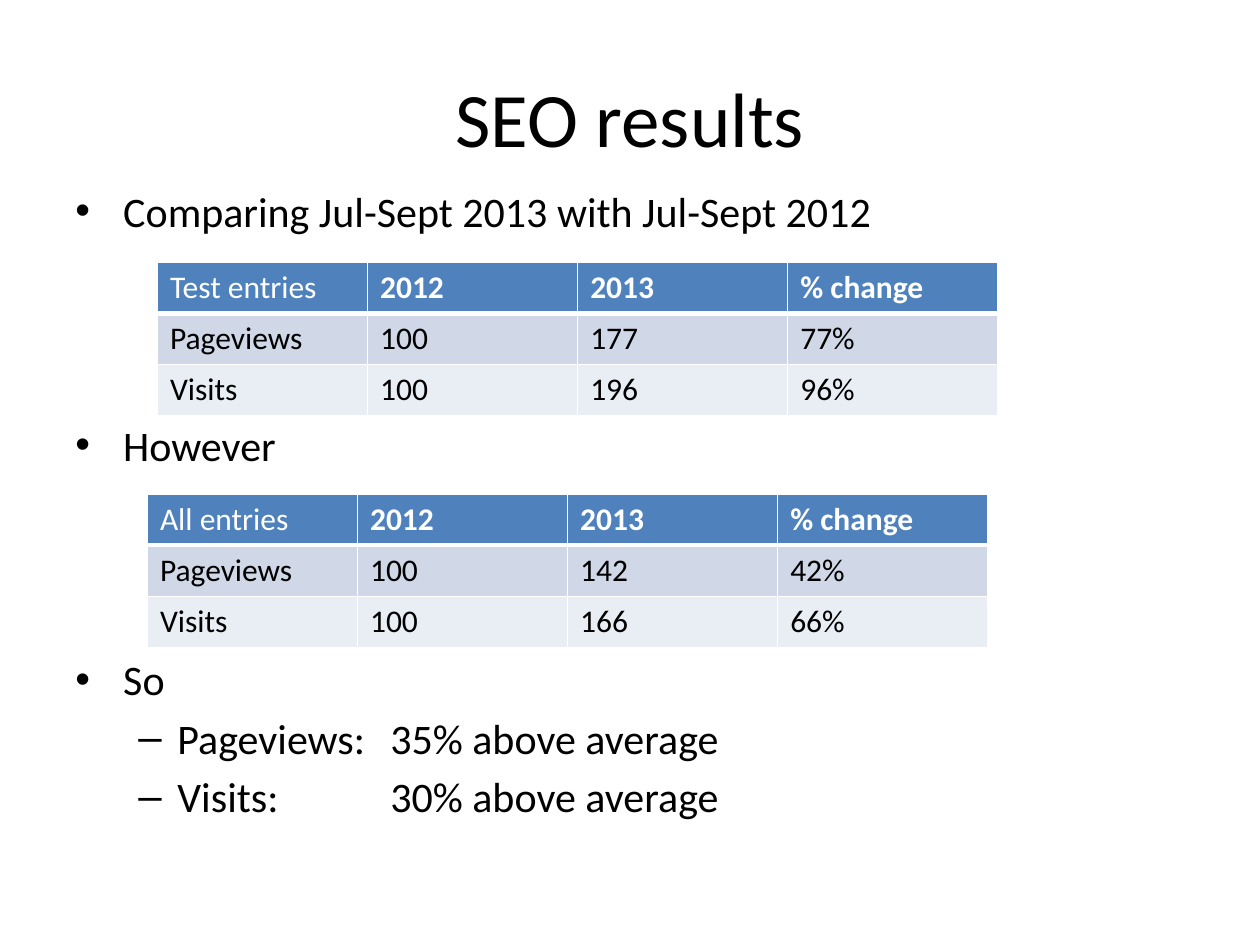
import pptx
import pptx.dml.color
import pptx.enum.text
import pptx.oxml
import pptx.oxml.ns
import pptx.util
from pptx.util import Inches

FONT = "Calibri"
BLACK, WHITE = "000000", "FFFFFF"
HEADER_FILL, BAND_FILLS = "4F81BD", ("D0D8E8", "E9EDF4")


def color(value):
    """Return the colour for a hex string."""
    return pptx.dml.color.RGBColor.from_string(value)


def set_font(paragraph, size, value=BLACK, bold=False):
    """Format all the text of a paragraph."""
    font = paragraph.font
    font.name, font.size, font.bold = FONT, pptx.util.Pt(size), bold
    font.color.rgb = color(value)


def add_xml(parent, markup):
    """Append a DrawingML element to a parent."""
    namespace = pptx.oxml.ns.nsdecls("a")
    parent.append(pptx.oxml.parse_xml(markup.replace("/>", f" {namespace}/>", 1)
                                      if markup.endswith("/>") and markup.count("<") == 1
                                      else markup.replace(">", f" {namespace}>", 1)))


def add_title(slide, text):
    """Place and fill the slide title."""
    title = slide.shapes.title
    title.left, title.top = Inches(0.5), Inches(0.3)
    title.width, title.height = Inches(9), Inches(1.25)
    title.text_frame.text = text
    title.text_frame.vertical_anchor = pptx.enum.text.MSO_ANCHOR.MIDDLE
    heading = title.text_frame.paragraphs[0]
    heading.alignment = pptx.enum.text.PP_ALIGN.CENTER
    set_font(heading, 44)


def add_bullets(slide, points):
    """Add the bulleted text, given as (text, level, space before)."""
    box = slide.shapes.add_textbox(Inches(0.5), Inches(1.42), Inches(9), Inches(5.58))
    frame = box.text_frame
    frame.word_wrap = True
    for index, (text, level, space) in enumerate(points):
        point = frame.paragraphs[0] if index == 0 else frame.add_paragraph()
        point.text, point.level = text, level
        point.space_before = pptx.util.Pt(space)
        set_font(point, 24)
        margin, hanging, mark = ((0.38, 0.38, "•"), (0.81, 0.31, "–"))[level]
        properties = point._p.get_or_add_pPr()
        properties.set("marL", str(Inches(margin)))
        properties.set("indent", str(-Inches(hanging)))
        add_xml(properties, '<a:buFont typeface="Arial"/>')
        add_xml(properties, f'<a:buChar char="{mark}"/>')


def set_borders(cell, bold_sides):
    """Draw white borders, thicker on the bold sides."""
    properties = cell._tc.get_or_add_tcPr()
    for side in "LRTB":
        width = pptx.util.Pt(3 if side in bold_sides else 1)
        add_xml(properties, f'<a:ln{side} w="{width}"><a:solidFill><a:srgbClr val="{WHITE}"/>'
                            f'</a:solidFill></a:ln{side}>')


def add_results_table(slide, left, top, rows):
    """Add a table with a header row and banded rows."""
    columns = len(rows[0])
    table = slide.shapes.add_table(len(rows), columns, Inches(left), Inches(top),
                                   Inches(6.67), Inches(1.22)).table
    for row_index, values in enumerate(rows):
        header = row_index == 0
        fill = HEADER_FILL if header else BAND_FILLS[(row_index - 1) % 2]
        for column_index, value in enumerate(values):
            cell = table.cell(row_index, column_index)
            cell.text = value
            set_font(cell.text_frame.paragraphs[0], 18, WHITE if header else BLACK,
                     header and column_index > 0)
            set_borders(cell, "B" if header else "T" if row_index == 1 else "")
            cell.fill.solid()
            cell.fill.fore_color.rgb = color(fill)


def main():
    """Build the slide and save it."""
    presentation = pptx.Presentation()
    presentation.slide_width, presentation.slide_height = Inches(10), Inches(7.5)
    slide = presentation.slides.add_slide(presentation.slide_layouts[5])
    add_title(slide, "SEO results")
    line_gap, table_gap = 4.8, 105
    add_bullets(slide, [
        ("Comparing Jul-Sept 2013 with Jul-Sept 2012", 0, line_gap),
        ("However", 0, table_gap),
        ("So", 0, table_gap),
        ("Pageviews: \t35% above average", 1, line_gap),
        ("Visits:\t\t30% above average", 1, line_gap),
    ])
    years = ["2012", "2013", "% change"]
    add_results_table(slide, 1.25, 2.08, [
        ["Test entries", *years],
        ["Pageviews", "100", "177", "77%"],
        ["Visits", "100", "196", "96%"],
    ])
    add_results_table(slide, 1.17, 3.92, [
        ["All entries", *years],
        ["Pageviews", "100", "142", "42%"],
        ["Visits", "100", "166", "66%"],
    ])
    presentation.save("out.pptx")


if __name__ == "__main__":
    main()
